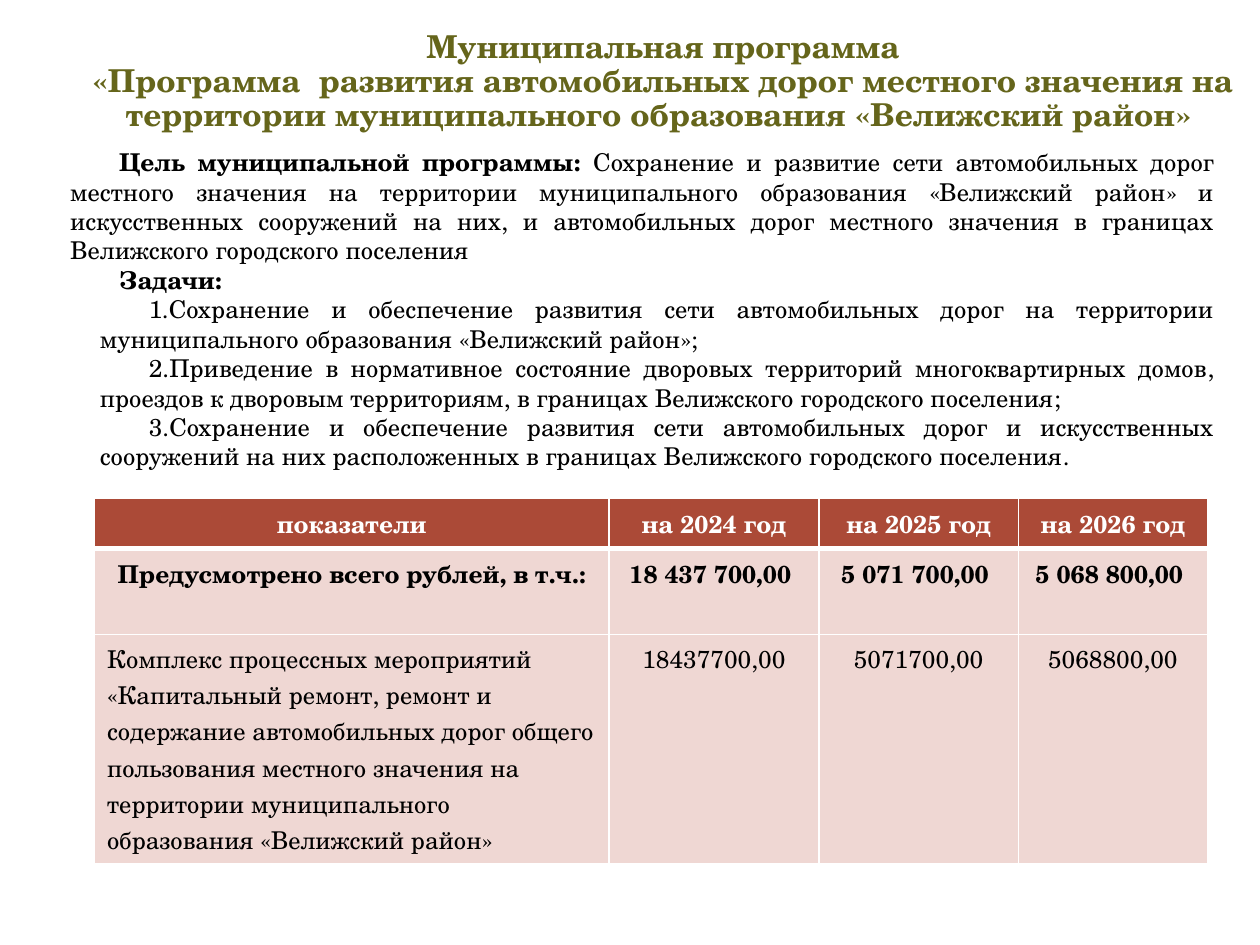
from dataclasses import dataclass

from lxml.etree import SubElement
from pptx import Presentation
from pptx.dml.color import RGBColor
from pptx.enum.text import MSO_ANCHOR, PP_ALIGN
from pptx.oxml.ns import qn
from pptx.util import Pt


@dataclass(frozen=True)
class Theme:
    font: str = "TeX Gyre Schola"
    title_size: int = 18
    body_size: int = 14
    title_color: str = "65651B"
    text_color: str = "000000"
    header_fill: str = "AB4A37"
    row_fill: str = "EFD7D3"
    white: str = "FFFFFF"
    title_spacing: float = 0.9
    table_spacing: float = 1.0


class SlideBuilder:
    """Draws styled elements on the current slide, with lengths in points."""

    def __init__(self, slide, theme):
        self.slide = slide
        self.theme = theme

    def style(self, paragraph, size, color, alignment, bold=None, spacing=None):
        font = paragraph.font
        font.name = self.theme.font
        font.size = Pt(size)
        font.color.rgb = RGBColor.from_string(color)
        font.bold = bold
        paragraph.alignment = alignment
        if spacing:
            paragraph.line_spacing = spacing

    def text_frame(self, left, top, width, height):
        shape = self.slide.shapes.add_textbox(Pt(left), Pt(top), Pt(width), Pt(height))
        frame = shape.text_frame
        frame.word_wrap = True
        frame.vertical_anchor = MSO_ANCHOR.MIDDLE
        return frame

    def title(self, text, *box):
        paragraph = self.text_frame(*box).paragraphs[0]
        paragraph.text = text
        self.style(paragraph, self.theme.title_size, self.theme.title_color,
                   PP_ALIGN.CENTER, True, self.theme.title_spacing)

    def body(self, goal_label, goal, tasks_label, tasks, *box):
        frame = self.text_frame(*box)
        entries = [([(goal_label, True), (goal, False)], False),
                   ([(tasks_label, True)], False)]
        entries += [([(task, False)], True) for task in tasks]
        for index, (runs, numbered) in enumerate(entries):
            paragraph = frame.add_paragraph() if index else frame.paragraphs[0]
            self.style(paragraph, self.theme.body_size, self.theme.text_color, PP_ALIGN.JUSTIFY)
            for text, bold in runs:
                run = paragraph.add_run()
                run.text = text
                run.font.bold = bold
            self.indent(paragraph, 17 if numbered else 0, 28, numbered)

    def indent(self, paragraph, left, first_line, numbered):
        properties = paragraph._p.get_or_add_pPr()
        properties.set("marL", str(Pt(left)))
        properties.set("indent", str(Pt(first_line)))
        if numbered:
            number = properties.makeelement(qn("a:buAutoNum"), {"type": "arabicPeriod"})
            properties.insert_element_before(number, "a:tabLst", "a:defRPr", "a:extLst")

    def borders(self, cell, bottom_width):
        properties = cell._tc.get_or_add_tcPr()
        for side, width in (("L", 1), ("R", 1), ("T", 1), ("B", bottom_width)):
            line = SubElement(properties, qn(f"a:ln{side}"), w=str(Pt(width)))
            fill = SubElement(line, qn("a:solidFill"))
            SubElement(fill, qn("a:srgbClr"), val=self.theme.white)

    def table(self, rows, left, top, widths, heights):
        theme = self.theme
        shape = self.slide.shapes.add_table(len(rows), len(widths), Pt(left), Pt(top),
                                            Pt(sum(widths)), Pt(sum(heights)))
        table = shape.table
        table.horz_banding = False
        for column, width in zip(table.columns, widths):
            column.width = Pt(width)
        for row, height in zip(table.rows, heights):
            row.height = Pt(height)
        for row_index, values in enumerate(rows):
            header = row_index == 0
            detail = row_index == len(rows) - 1
            for column_index, text in enumerate(values):
                cell = table.cell(row_index, column_index)
                self.borders(cell, 3 if header else 1)
                cell.fill.solid()
                cell.fill.fore_color.rgb = RGBColor.from_string(
                    theme.header_fill if header else theme.row_fill)
                cell.text = text
                left_aligned = detail and column_index == 0
                self.style(cell.text_frame.paragraphs[0], theme.body_size,
                           theme.white if header else theme.text_color,
                           PP_ALIGN.LEFT if left_aligned else PP_ALIGN.CENTER,
                           not detail, theme.table_spacing)


def main():
    presentation = Presentation()
    presentation.slide_width, presentation.slide_height = Pt(720), Pt(540)
    slide = presentation.slides.add_slide(presentation.slide_layouts[6])
    builder = SlideBuilder(slide, Theme())
    builder.title(
        "Муниципальная программа\v«Программа  развития автомобильных дорог местного значения "
        "на территории муниципального образования «Велижский район» ",
        37, 11.5, 684, 70.6)
    builder.table(
        [("показатели", "на 2024 год", "на 2025 год", "на 2026 год"),
         ("Предусмотрено всего рублей, в т.ч.:",
          "18 437 700,00 ", "5 071 700,00 ", "5 068 800,00 "),
         ("Комплекс процессных мероприятий «Капитальный ремонт, ремонт и содержание "
          "автомобильных дорог общего пользования местного значения на территории "
          "муниципального образования «Велижский район»",
          "18437700,00", "5071700,00", "5068800,00")],
        54, 284.8, (294, 120, 114, 108), (28.8, 49, 131))
    builder.body(
        "Цель муниципальной программы: ",
        "Сохранение и развитие сети автомобильных дорог местного значения на территории "
        "муниципального образования «Велижский район» и искусственных сооружений на них, "
        "и автомобильных дорог местного значения в границах Велижского городского поселения",
        "Задачи:",
        ["Сохранение и обеспечение развития сети автомобильных дорог на территории "
         "муниципального образования «Велижский район»;",
         "Приведение в нормативное состояние дворовых территорий многоквартирных домов, "
         "проездов к дворовым территориям, в границах Велижского городского поселения;",
         "Сохранение и обеспечение развития сети автомобильных дорог и искусственных "
         "сооружений на них расположенных в границах Велижского городского поселения."],
        33, 75.8, 668, 201.6)
    presentation.save("out.pptx")


if __name__ == "__main__":
    main()
